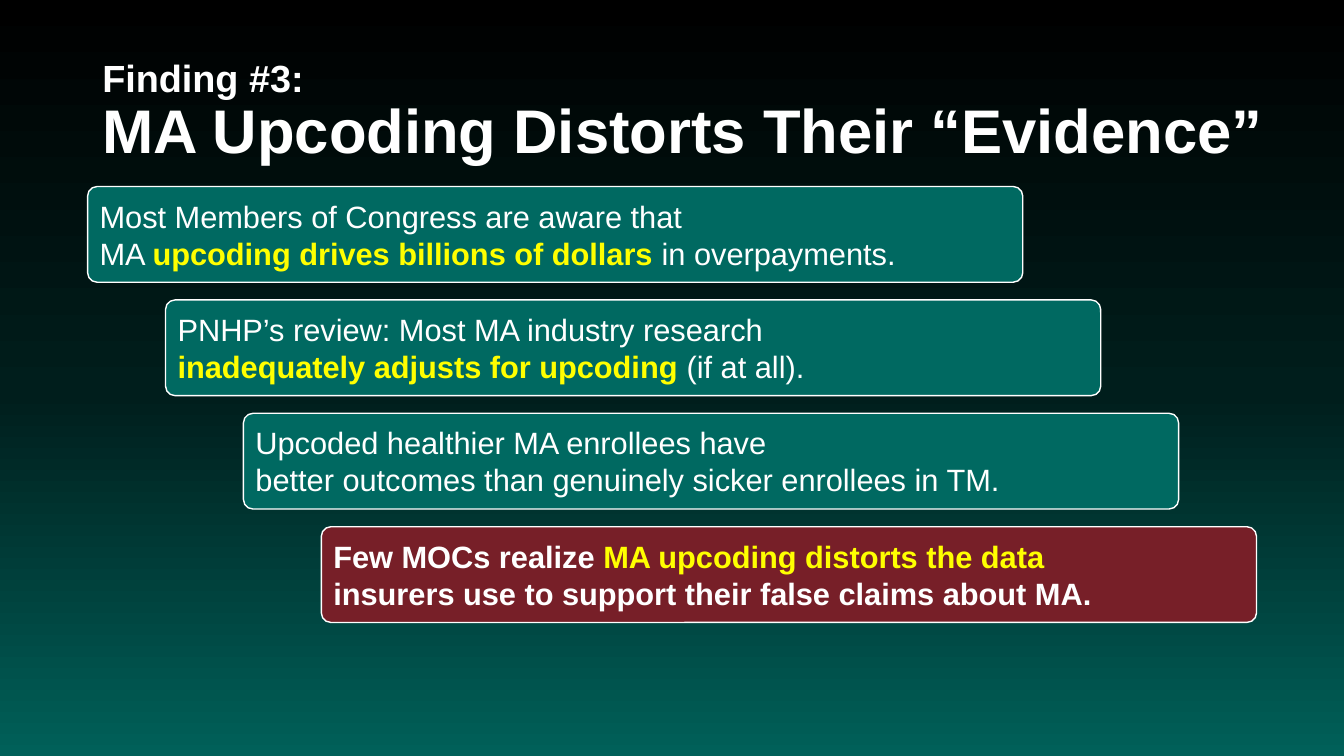
from copy import deepcopy

from pptx import Presentation
from pptx.dml.color import RGBColor
from pptx.enum import shapes, text
from pptx.oxml.ns import qn
from pptx.util import Pt

WHITE = RGBColor(0xFF, 0xFF, 0xFF)
YELLOW = RGBColor(0xFF, 0xFF, 0x00)
TEAL = RGBColor(0x00, 0x69, 0x61)
MAROON = RGBColor(0x77, 0x1F, 0x28)
BACKDROP = [
    (0, RGBColor(0x00, 0x00, 0x00)),
    (0.52, RGBColor(0x00, 0x1E, 0x1C)),
    (1, RGBColor(0x00, 0x60, 0x59)),
]

PLAIN = {"name": "Arial", "size": Pt(22), "bold": False, "color": WHITE}
BOLD = {**PLAIN, "bold": True}
ACCENT = {**BOLD, "color": YELLOW}

TITLE = [
    ("Finding #3:", {**BOLD, "size": Pt(27)}),
    ("MA Upcoding Distorts Their “Evidence”", {**BOLD, "size": Pt(44)}),
]
# Each step: fill, then lines made of (words, format) spans
STEPS = [
    (TEAL, [
        [("Most Members of Congress are aware that", PLAIN)],
        [("MA ", PLAIN), ("upcoding drives billions of dollars ", ACCENT),
         ("in overpayments.", PLAIN)],
    ]),
    (TEAL, [
        [("PNHP’s review: Most MA industry research", PLAIN)],
        [("inadequately adjusts for upcoding ", ACCENT), ("(if at all).", PLAIN)],
    ]),
    (TEAL, [
        [("Upcoded healthier MA enrollees have", PLAIN)],
        [("better outcomes than genuinely sicker enrollees in TM.", PLAIN)],
    ]),
    (MAROON, [
        [("Few MOCs realize ", BOLD), ("MA upcoding distorts the data", ACCENT)],
        [("insurers use to support their false claims about MA.", BOLD)],
    ]),
]

STEP_LEFT, STEP_TOP = 62.6, 133.2
STEP_WIDTH, STEP_HEIGHT = 668, 68.4
SHIFT_RIGHT, SHIFT_DOWN = 55.65, 81


def add_span(para, words, look):
    span = para.add_run()
    span.text = words
    for key, value in look.items():
        if key == "color":
            span.font.color.rgb = value
        else:
            setattr(span.font, key, value)


def set_frame(frame, **values):
    frame.word_wrap = True
    frame.vertical_anchor = text.MSO_ANCHOR.MIDDLE
    for key, value in values.items():
        setattr(frame, key, value)


def paint_backdrop(page):
    fill = page.background.fill
    fill.gradient()
    fill.gradient_angle = 270
    stop_list = page.element.find(".//" + qn("a:gsLst"))
    stop_list.append(deepcopy(stop_list[0]))
    for stop, (position, color) in zip(fill.gradient_stops, BACKDROP):
        stop.position = position
        stop.color.rgb = color


def add_title(page):
    box = page.shapes.add_textbox(Pt(66), Pt(28.8), Pt(847), Pt(104.4))
    set_frame(box.text_frame)
    para = box.text_frame.paragraphs[0]
    para.line_spacing = 0.9
    for index, (words, look) in enumerate(TITLE):
        if index:
            para.add_line_break()
        add_span(para, words, look)


def add_step(page, index, color, lines):
    box = page.shapes.add_shape(
        shapes.MSO_SHAPE.ROUNDED_RECTANGLE,
        Pt(STEP_LEFT + index * SHIFT_RIGHT), Pt(STEP_TOP + index * SHIFT_DOWN),
        Pt(STEP_WIDTH), Pt(STEP_HEIGHT))
    box.adjustments[0] = 0.1
    box.shadow.inherit = False
    box.fill.solid()
    box.fill.fore_color.rgb = color
    box.line.color.rgb = WHITE
    box.line.width = Pt(1)
    frame = box.text_frame
    set_frame(frame, margin_left=Pt(6.6), margin_right=Pt(72),
              margin_top=Pt(6.6), margin_bottom=Pt(6.6))
    for number, spans in enumerate(lines):
        para = frame.add_paragraph() if number else frame.paragraphs[0]
        para.alignment = text.PP_ALIGN.LEFT
        for words, look in spans:
            add_span(para, words, look)


def main():
    deck = Presentation()
    deck.slide_width, deck.slide_height = Pt(960), Pt(540)
    page = deck.slides.add_slide(deck.slide_layouts[6])
    paint_backdrop(page)
    add_title(page)
    for index, (color, lines) in enumerate(STEPS):
        add_step(page, index, color, lines)
    deck.save("out.pptx")


if __name__ == "__main__":
    main()
